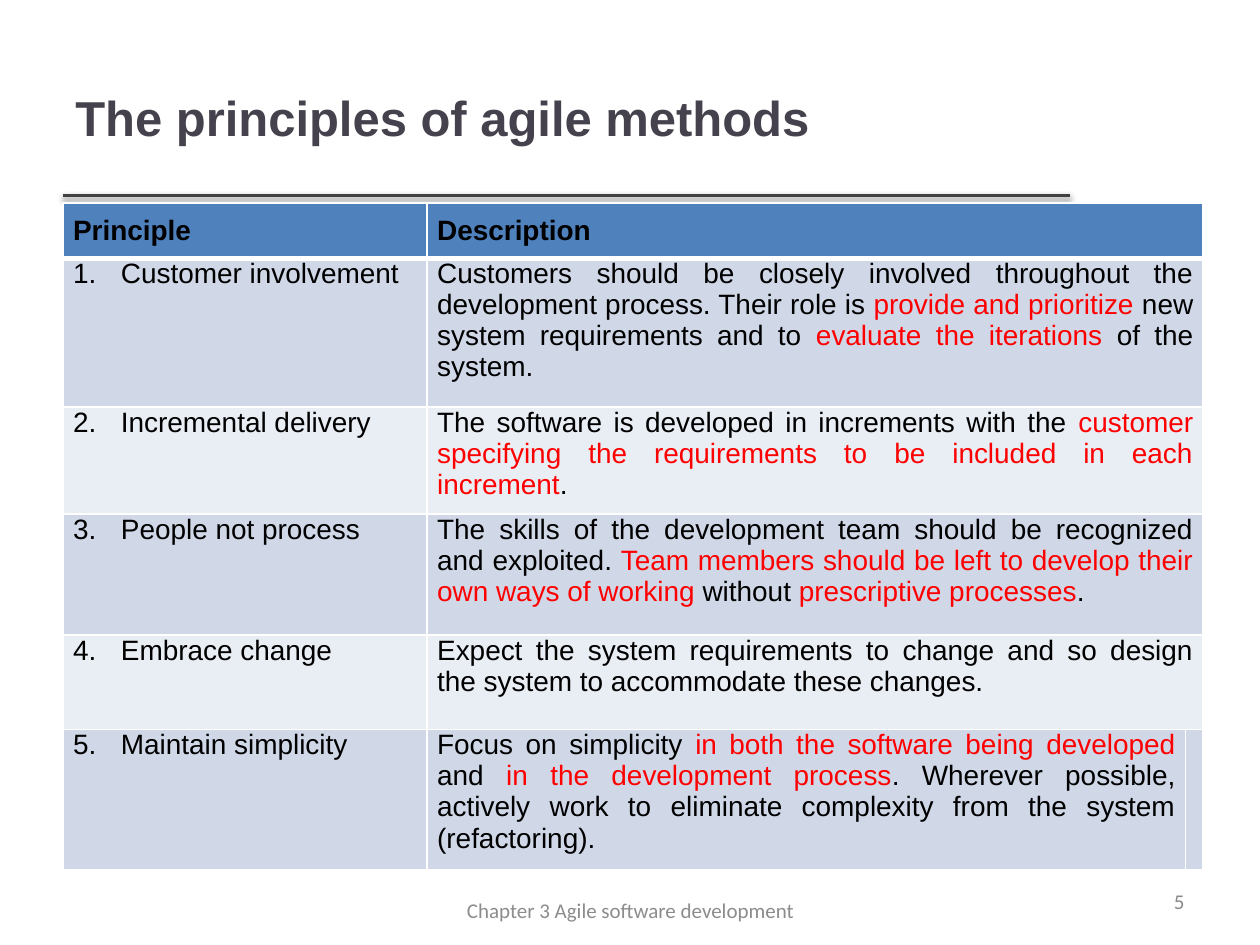
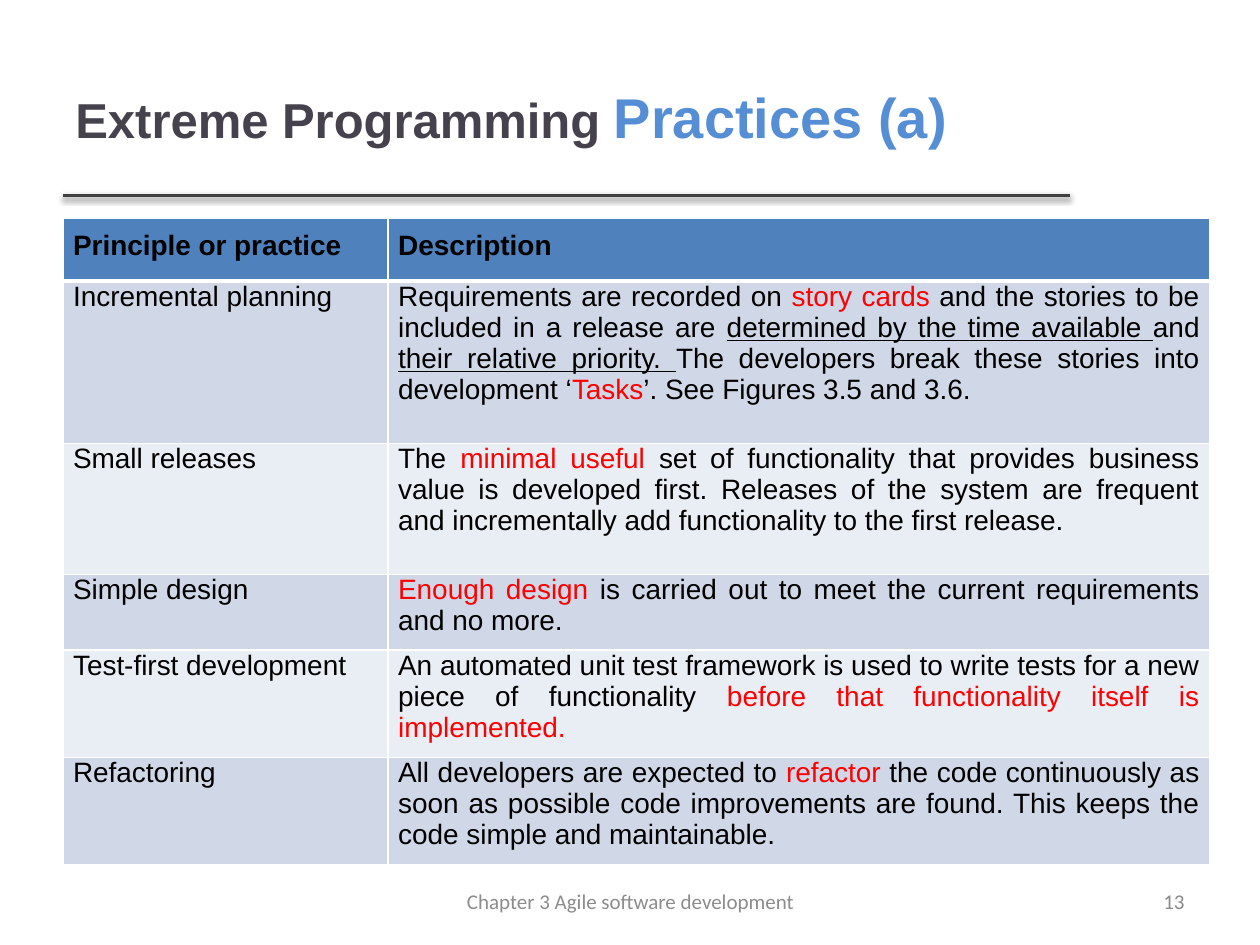
from pptx import Presentation
from pptx.dml.color import RGBColor as Rgb
from pptx.enum.shapes import MSO_CONNECTOR as Conn
from pptx.enum.text import MSO_ANCHOR as Anchor, PP_ALIGN as Align
from pptx.oxml import parse_xml
from pptx.oxml.ns import nsdecls
from pptx.util import Emu, Inches, Pt

HEX = {
    "title": "46424D", "accent": "558ED5", "rule": "404040",
    "head": "4F81BD", "odd": "D0D8E8", "even": "E9EDF4",
    "ink": "000000", "red": "FF0000", "edge": "FFFFFF",
    "page": "898989", "foot": "8C8C8C",
}
NS = nsdecls("a")

# A column and a row are each one hundredth of the slide.
COL, ROW = Inches(0.1), Inches(0.075)
LEFT = 5

SLIDES = [
    dict(
        title="The principles of agile methods",
        page="5", foot=93.6, top=21.47, numbered=True,
        cols=[28.9, 60.2, 1.4],
        rows=[5.87, 15.73, 11.2, 12.8, 10, 14.53],
        cells=[
            ("Principle", "Description"),
            ("Customer involvement",
             "Customers should be closely involved throughout the development "
             "process. Their role is |*provide and prioritize |new system "
             "requirements and to |*evaluate the iterations |of the system."),
            ("Incremental delivery",
             "The software is developed in increments with the |*customer "
             "specifying the requirements to be included in each increment|."),
            ("People not process",
             "The skills of the development team should be recognized and "
             "exploited. |*Team members should be left to develop their own "
             "ways of working |without|* prescriptive processes|."),
            ("Embrace change",
             "Expect the system requirements to change and so design the "
             "system to accommodate these changes."),
            ("Maintain simplicity",
             "Focus on simplicity |*in both the software being developed |and "
             "|*in the development process|. Wherever possible, actively work "
             "to eliminate complexity from the system (refactoring).", ""),
        ],
    ),
    dict(
        title="Extreme Programming |+Practices (a)",
        page="13", foot=92.67, top=23.07, numbered=False,
        cols=[25.8, 65.2],
        rows=[6.67, 17.2, 13.87, 8, 11.2, 11.2],
        cells=[
            ("Principle or practice", "Description"),
            ("Incremental planning",
             "Requirements are recorded on |*story cards| and the stories to "
             "be included in a release are |_determined by the time available "
             "|and |_their relative priority. |The developers break these "
             "stories into development ‘|*Tasks|’. See Figures 3.5 and 3.6."),
            ("Small releases",
             "The |*minimal useful| set of functionality that provides "
             "business value is developed first. Releases of the system are "
             "frequent and incrementally add functionality to the first "
             "release."),
            ("Simple design",
             "*Enough design| is carried out to meet the current requirements "
             "and no more."),
            ("Test-first development",
             "An automated unit test framework is used to write tests for a "
             "new piece of functionality |*before that functionality itself "
             "is implemented."),
            ("Refactoring",
             "All developers are expected to |*refactor |the code continuously "
             "as soon as possible code improvements are found. This keeps the "
             "code simple and maintainable."),
        ],
    ),
]


def write(frame, text, size=16, face="Arial", tone="ink", bold=False,
          align=Align.LEFT, num=0):
    """Fill a frame; parts split by | may start with * red, _ underline, + accent."""
    frame.word_wrap = True
    para = frame.paragraphs[0]
    para.alignment = align
    if num:
        props = para._p.get_or_add_pPr()
        props.set("marL", str(Inches(0.38)))
        props.set("indent", str(-Inches(0.38)))
        props.append(parse_xml(
            f'<a:buAutoNum {NS} type="arabicPeriod" startAt="{num}"/>'))
    for part in filter(None, text.split("|")):
        mark = part[0] if part[0] in "*_+" else ""
        run = para.add_run()
        run.text = part[len(mark):]
        font = run.font
        font.name, font.bold = face, bold
        font.size = Pt(32 if mark == "+" else size)
        font.color.rgb = Rgb.from_string(
            HEX[{"*": "red", "+": "accent"}.get(mark, tone)])
        if mark == "_":
            font.underline = True


def label(slide, text, x, y, w, h, **form):
    """Add a text box, placed in grid units and centred in height."""
    box = slide.shapes.add_textbox(
        *(Emu(int(n)) for n in (x * COL, y * ROW, w * COL, h * ROW)))
    box.text_frame.vertical_anchor = Anchor.MIDDLE
    write(box.text_frame, text, **form)


deck = Presentation()
deck.slide_width, deck.slide_height = 100 * COL, 100 * ROW

for data in SLIDES:
    slide = deck.slides.add_slide(deck.slide_layouts[6])

    # Rule under the title, with a soft shadow
    y = int(20.67 * ROW)
    rule = slide.shapes.add_connector(
        Conn.STRAIGHT, LEFT * COL, y, int(84.9 * COL), y)
    rule.line.color.rgb = Rgb.from_string(HEX["rule"])
    rule.line.width = Pt(2)
    rule._element.spPr.append(parse_xml(
        f'<a:effectLst {NS}><a:outerShdw blurRad="{Pt(3.1)}" dist="{Pt(1.6)}" '
        f'dir="5400000"><a:srgbClr val="{HEX["ink"]}"><a:alpha val="38000"/>'
        '</a:srgbClr></a:outerShdw></a:effectLst>'))
    label(slide, data["title"], LEFT, 4, 79.8, 16.67,
          size=28, tone="title", bold=True)

    # Table
    cols, rows = data["cols"], data["rows"]
    table = slide.shapes.add_table(
        len(rows), len(cols), LEFT * COL, int(data["top"] * ROW),
        int(sum(cols) * COL), int(sum(rows) * ROW)).table
    table.first_row = table.horz_banding = False
    for col, wide in zip(table.columns, cols):
        col.width = int(wide * COL)
    for r, (texts, high) in enumerate(zip(data["cells"], rows)):
        table.rows[r].height = int(high * ROW)
        if len(texts) < len(cols):
            table.cell(r, 1).merge(table.cell(r, len(cols) - 1))
        for c in range(len(cols)):
            cell = table.cell(r, c)
            # The narrow third column has no room for side margins.
            cell.margin_left = cell.margin_right = Inches(0.08 if c < 2 else 0)
            cell.margin_top = Inches(0 if r else 0.1)
            cell.margin_bottom = Inches(0.05)
            cell.fill.solid()
            cell.fill.fore_color.rgb = Rgb.from_string(
                HEX["head" if r == 0 else "odd" if r % 2 else "even"])
            for i, side in enumerate("LRTB"):
                thick = (r, side) in ((0, "B"), (1, "T"))
                cell._tc.get_or_add_tcPr().insert(i, parse_xml(
                    f'<a:ln{side} {NS} w="{Pt(3 if thick else 1)}"><a:solidFill>'
                    f'<a:srgbClr val="{HEX["edge"]}"/></a:solidFill></a:ln{side}>'))
            if c < len(texts):
                write(cell.text_frame, texts[c], bold=r == 0, align=Align.JUSTIFY,
                      num=r if data["numbered"] and c == 0 else 0)

    # Footer
    label(slide, data["page"], 71.7, 92.67, 23.3, 5.33,
          size=12, face="Calibri", tone="page", align=Align.RIGHT)
    label(slide, "Chapter 3 Agile software development",
          34.2, data["foot"], 31.7, 5.33,
          size=12, face="Calibri", tone="foot", align=Align.CENTER)

deck.save("out.pptx")
